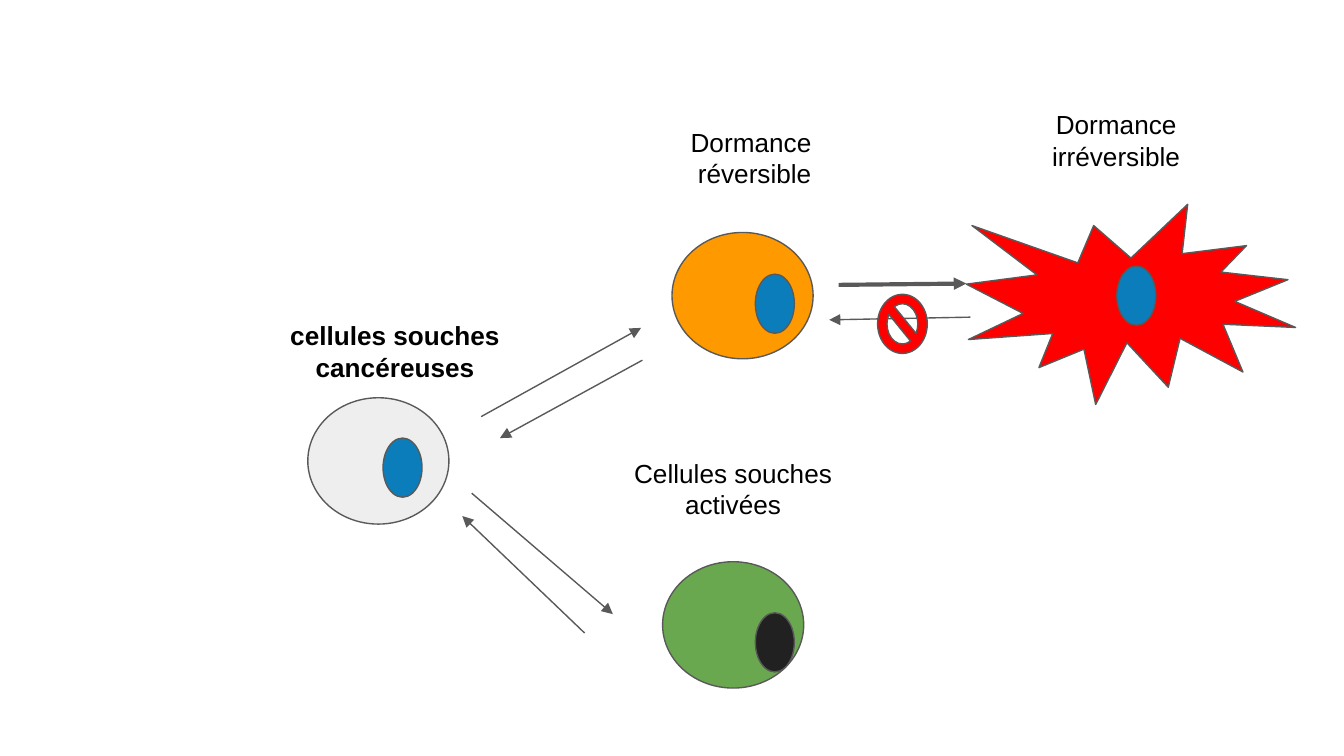
"""Build the slide on cancer stem cells, their dormancy and their activation."""
import pptx
import pptx.dml.color
import pptx.enum.shapes
import pptx.enum.text
import pptx.oxml
import pptx.oxml.ns
import pptx.util

Inches = pptx.util.Inches
Pt = pptx.util.Pt
SHAPES = pptx.enum.shapes.MSO_SHAPE

THEME = {
    "font": "Arial", "size": 14, "text": "000000", "line": "595959",
    "thin": 0.75, "thick": 2.25, "stem": "EEEEEE", "dormant": "FF9900",
    "active": "6AA84F", "alert": "FF0000", "blue": "0C7DBB", "dark": "212121",
}
CELL = (1.05, 0.94)
NUCLEUS = (0.29, 0.44)
BURST = (2.45, 1.49)
BAN = (0.37, 0.44)
LABEL_HEIGHT = 0.67

BODIES = [
    (SHAPES.OVAL, (2.29, 2.96), CELL, "stem"),
    (SHAPES.OVAL, (5, 1.73), CELL, "dormant"),
    (SHAPES.OVAL, (4.93, 4.18), CELL, "active"),
    (SHAPES.EXPLOSION1, (7.19, 1.52), BURST, "alert"),
]
NUCLEI = [
    (SHAPES.OVAL, (2.85, 3.26), NUCLEUS, "blue"),
    (SHAPES.OVAL, (5.62, 2.04), NUCLEUS, "blue"),
    (SHAPES.OVAL, (5.62, 4.56), NUCLEUS, "dark"),
    (SHAPES.OVAL, (8.31, 1.98), NUCLEUS, "blue"),
]
ARROWS = [
    ((3.58, 3.1), (4.77, 2.44), "thin"),
    ((4.78, 2.68), (3.72, 3.26), "thin"),
    ((3.51, 3.67), (4.56, 4.57), "thin"),
    ((4.35, 4.71), (3.44, 3.84), "thin"),
    ((6.24, 2.12), (7.19, 2.11), "thick"),
    ((7.22, 2.36), (6.17, 2.38), "thin"),
]
BAN_SIGN = (SHAPES.NO_SYMBOL, (6.53, 2.19), BAN, "alert")
LABELS = [
    ("cellules souches cancéreuses", (1.97, 2.28), 1.94, True),
    ("Dormance  réversible", (4.77, 0.84), 1.69, False),
    ("Dormance irréversible", (7.46, 0.71), 1.69, False),
    ("Cellules souches activées", (4.61, 3.3), 1.69, False),
]


def colour(name):
    return pptx.dml.color.RGBColor.from_string(THEME[name])


def style_line(line, weight):
    line.color.rgb = colour("line")
    line.width = Pt(THEME[weight])


def add_figure(page, kind, place, size, fill):
    figure = page.shapes.add_shape(kind, *map(Inches, place + size))
    figure.shadow.inherit = False
    figure.fill.solid()
    figure.fill.fore_color.rgb = colour(fill)
    style_line(figure.line, "thin")
    return figure


def add_arrow(page, start, end, weight):
    arrow = page.shapes.add_connector(
        pptx.enum.shapes.MSO_CONNECTOR.STRAIGHT, *map(Inches, start + end))
    style_line(arrow.line, weight)
    head = pptx.oxml.parse_xml(
        f'<a:tailEnd {pptx.oxml.ns.nsdecls("a")} type="triangle"/>')
    arrow.line._get_or_add_ln().append(head)
    effects = pptx.oxml.parse_xml(f'<a:effectLst {pptx.oxml.ns.nsdecls("a")}/>')
    arrow._element.spPr.append(effects)


def add_label(page, text, place, width, bold):
    box = page.shapes.add_textbox(*map(Inches, place + (width, LABEL_HEIGHT)))
    frame = box.text_frame
    frame.word_wrap = True
    frame.auto_size = pptx.enum.text.MSO_AUTO_SIZE.SHAPE_TO_FIT_TEXT
    frame.margin_left = frame.margin_right = Inches(0.1)
    frame.margin_top = frame.margin_bottom = Inches(0.1)
    frame.text = text
    para = frame.paragraphs[0]
    para.alignment = pptx.enum.text.PP_ALIGN.CENTER
    font = para.runs[0].font
    font.name = THEME["font"]
    font.size = Pt(THEME["size"])
    font.bold = bold
    font.color.rgb = colour("text")


def main():
    deck = pptx.Presentation()
    deck.slide_width = Inches(10)
    deck.slide_height = deck.slide_width * 9 // 16
    page = deck.slides.add_slide(deck.slide_layouts[6])
    for figure in BODIES + NUCLEI:
        add_figure(page, *figure)
    for arrow in ARROWS:
        add_arrow(page, *arrow)
    ban = add_figure(page, *BAN_SIGN)
    ban.adjustments[0] = 0.19
    for label in LABELS:
        add_label(page, *label)
    deck.save("out.pptx")


if __name__ == "__main__":
    main()
